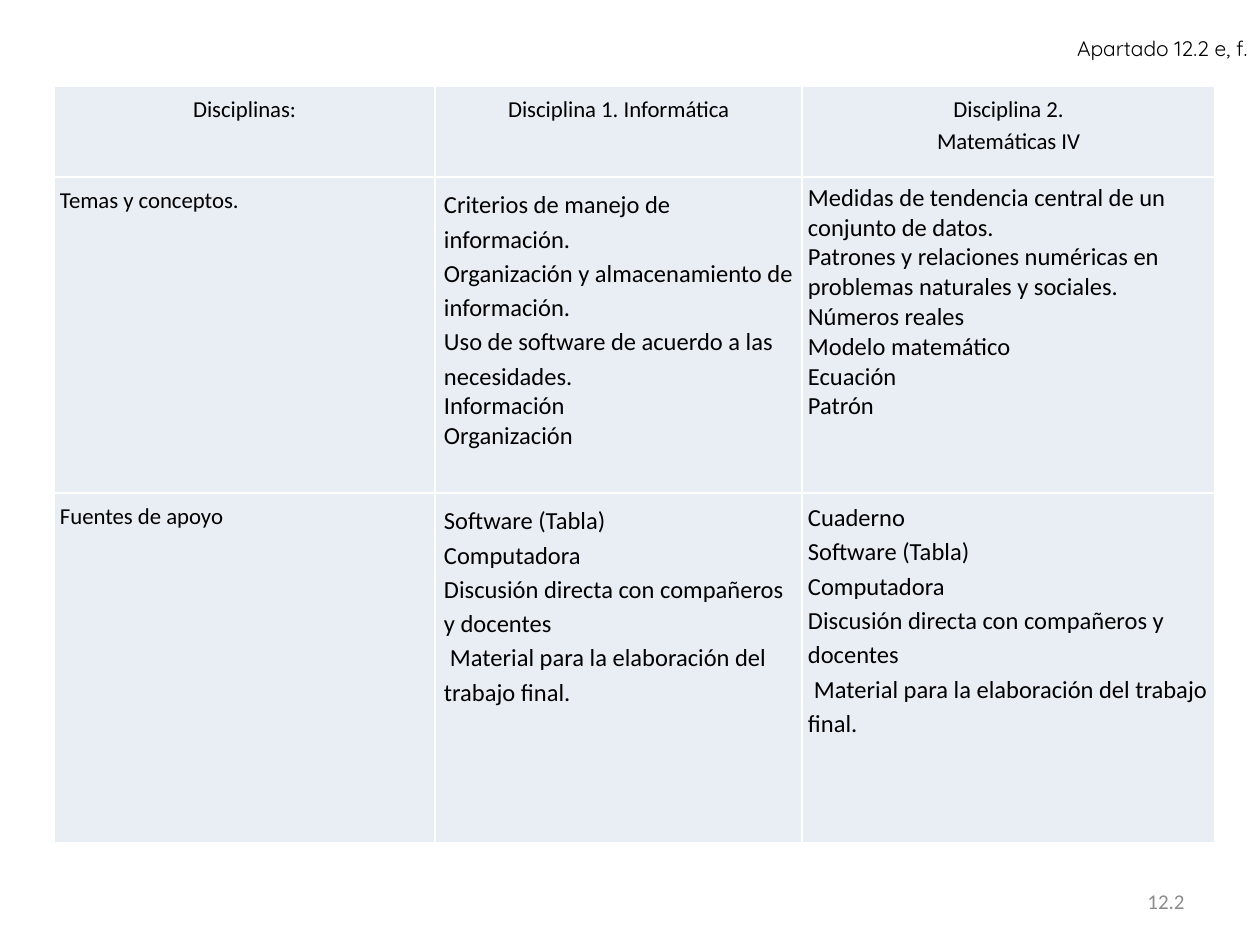
"""Build the slide listing topics and support sources for each discipline."""
from dataclasses import dataclass
from typing import Any

import lxml.etree
import pptx
import pptx.dml.color
import pptx.enum.text
import pptx.oxml.ns
import pptx.util

PX = 914400 / 126
ALIGN = pptx.enum.text.PP_ALIGN
ANCHOR = pptx.enum.text.MSO_ANCHOR
BLACK, WHITE, GRAY, PALE = "000000", "FFFFFF", "8C8C8C", "E9EDF4"


@dataclass
class Line:
    text: str
    size: int = 14
    align: Any = ALIGN.LEFT
    spacing: float = 1.15
    indent: int = 0
    font: str = "Calibri"
    color: str = BLACK


@dataclass
class Cell:
    lines: list[Line]
    margin: int = 6


@dataclass
class Label:
    x: int
    y: int
    w: int
    h: int
    line: Line
    anchor: Any = ANCHOR.TOP


def px(n: float) -> int:
    """Turn pixels into EMU."""
    return round(n * PX)


def rgb(color: str) -> pptx.dml.color.RGBColor:
    """Turn a hex string into a colour."""
    return pptx.dml.color.RGBColor.from_string(color)


def write(tf: Any, lines: list[Line]) -> None:
    """Write one paragraph for each line."""
    tf.word_wrap = True
    for i, line in enumerate(lines):
        p = tf.add_paragraph() if i else tf.paragraphs[0]
        p.alignment = line.align
        p.line_spacing = line.spacing
        if line.indent:
            p._p.get_or_add_pPr().set("indent", str(px(line.indent)))
        r = p.add_run()
        r.text = line.text
        r.font.size = pptx.util.Pt(line.size)
        r.font.name = line.font
        r.font.color.rgb = rgb(line.color)


def add_label(s: Any, label: Label) -> None:
    """Add a text box holding one line."""
    sp = s.shapes.add_textbox(px(label.x), px(label.y), px(label.w), px(label.h))
    write(sp.text_frame, [label.line])
    sp.text_frame.vertical_anchor = label.anchor


def set_borders(cell: Any, color: str, width: float) -> None:
    """Draw the four borders of a table cell."""
    qn = pptx.oxml.ns.qn
    pr = cell._tc.get_or_add_tcPr()
    for i, side in enumerate(("lnL", "lnR", "lnT", "lnB")):
        ln = lxml.etree.Element(qn(f"a:{side}"), w=str(pptx.util.Pt(width)))
        fill = lxml.etree.SubElement(ln, qn("a:solidFill"))
        lxml.etree.SubElement(fill, qn("a:srgbClr"), val=color)
        pr.insert(i, ln)


def add_grid(s: Any, x: int, y: int, cols: list[int], rows: list[int],
             cells: list[list[Cell]]) -> None:
    """Add the table of disciplines."""
    table = s.shapes.add_table(len(rows), len(cols), px(x), px(y),
                               px(sum(cols)), px(sum(rows))).table
    table.first_row = table.horz_banding = False
    for column, w in zip(table.columns, cols):
        column.width = px(w)
    for row, h, contents in zip(table.rows, rows, cells):
        row.height = px(h)
        for cell, content in zip(row.cells, contents):
            cell.margin_left = cell.margin_right = px(content.margin)
            cell.margin_top = cell.margin_bottom = px(content.margin)
            cell.fill.solid()
            cell.fill.fore_color.rgb = rgb(PALE)
            set_borders(cell, WHITE, 1)
            write(cell.text_frame, content.lines)


def heading(*texts: str) -> Cell:
    """Describe a centred column heading."""
    return Cell([Line(t, 13, ALIGN.CENTER) for t in texts])


def loose(*texts: str) -> list[Line]:
    """Describe lines with wide spacing."""
    return [Line(t) for t in texts]


def tight(*texts: str) -> list[Line]:
    """Describe lines with single spacing."""
    return [Line(t, spacing=1.0) for t in texts]


SOURCES = loose("Software (Tabla)", "Computadora",
                "Discusión directa con compañeros y docentes")
SOURCES.append(Line("Material para la elaboración del trabajo final.", indent=6))

CELLS = [
    [heading("Disciplinas:"), heading("Disciplina 1. Informática"),
     heading("Disciplina 2.", "Matemáticas IV")],
    [Cell([Line("Temas y conceptos.", 13, ALIGN.JUSTIFY)]),
     Cell(loose("Criterios de manejo de información.",
                "Organización y almacenamiento de información.",
                "Uso de software de acuerdo a las necesidades.")
          + tight("Información", "Organización"), 9),
     Cell(tight("Medidas de tendencia central de un conjunto de datos.",
                "Patrones y relaciones numéricas en problemas naturales y sociales.",
                "Números reales", "Modelo matemático", "Ecuación", "Patrón"))],
    [Cell([Line("Fuentes de apoyo", 13)]), Cell(SOURCES, 9),
     Cell(loose("Cuaderno") + SOURCES)],
]

LABELS = [
    Label(903, 876, 294, 50,
          Line("12.2", 12, ALIGN.RIGHT, 1.0, color=GRAY), ANCHOR.MIDDLE),
    Label(246, 29, 1014, 38,
          Line("Apartado 12.2 e, f.", 12, ALIGN.RIGHT, 1.0, font="Quicksand")),
]


def main() -> None:
    """Build and save the slide."""
    prs = pptx.Presentation()
    prs.slide_width, prs.slide_height = px(1260), px(945)
    s = prs.slides.add_slide(prs.slide_layouts[6])
    add_grid(s, 54, 86, [381, 367, 413], [91, 316, 350], CELLS)
    for label in LABELS:
        add_label(s, label)
    prs.save("out.pptx")


if __name__ == "__main__":
    main()
